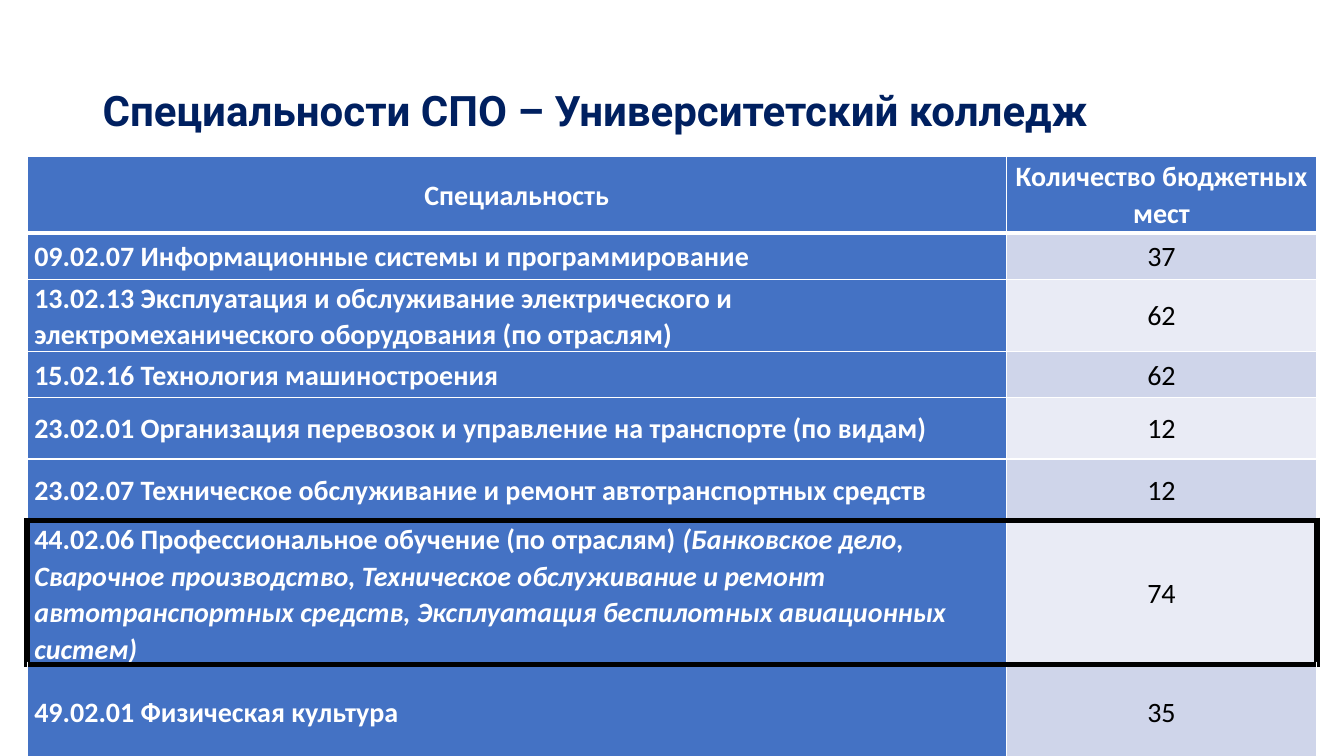
from pptx import Presentation
from pptx.util import Inches, Pt
from pptx.dml.color import RGBColor as RGB
from pptx.enum.text import PP_ALIGN as Align, MSO_ANCHOR as Anchor
from lxml.etree import fromstring

TITLE = "Специальности СПО – Университетский колледж"
HEAD = ("Специальность", "Количество бюджетных мест")
ROWS = [
    ("09.02.07 Информационные системы и программирование", "", "37", 0.46),
    ("13.02.13 Эксплуатация и обслуживание электрического и "
     "электромеханического оборудования (по отраслям)", "", "62", 0.66),
    ("15.02.16 Технология машиностроения", "", "62", 0.46),
    ("23.02.01 Организация перевозок и управление на транспорте (по видам)",
     "", "12", 0.61),
    ("23.02.07 Техническое обслуживание и ремонт автотранспортных средств",
     "", "12", 0.61),
    ("44.02.06 Профессиональное обучение (по отраслям) ",
     "(Банковское дело, Сварочное производство, Техническое обслуживание "
     "и ремонт автотранспортных средств, Эксплуатация беспилотных "
     "авиационных систем)", "74", 0.9),
    ("49.02.01 Физическая культура", "", "35", 0.94),
]
FRAMED = 6
COLS = (9.71, 3.08)
HEAD_H = 0.76
THEME = {
    "title": "002060", "head": "4472C4", "bands": ("E9EBF5", "CFD5EA"),
    "white": "FFFFFF", "black": "000000",
    "title_font": "Roboto", "font": "Calibri", "title_size": 30, "size": 20,
    "thin": 1, "rule": 3, "frame": 4.5,
}
NS = "http://schemas.openxmlformats.org/drawingml/2006/main"


def add_run(para, text, color, size, font, bold=False, slant=False):
    run = para.add_run()
    run.text = text
    face = run.font
    face.name, face.size = font, Pt(size)
    face.bold, face.italic = bold, slant
    face.color.rgb = RGB.from_string(color)


def edge(row, col, side):
    thin = (THEME["white"], THEME["thin"])
    frame = (THEME["black"], THEME["frame"])
    if side == "T":
        return edge(row - 1, col, "B") if row else thin
    if side == "B":
        if row == 0:
            return THEME["white"], THEME["rule"]
        return frame if row in (FRAMED - 1, FRAMED) else thin
    outer = (col, side) in ((0, "L"), (1, "R"))
    return frame if row == FRAMED and outer else thin


def set_edges(cell, row, col):
    props = cell._tc.get_or_add_tcPr()
    for at, side in enumerate("LRTB"):
        color, width = edge(row, col, side)
        props.insert(at, fromstring(
            f'<a:ln{side} xmlns:a="{NS}" w="{Pt(width)}"><a:solidFill>'
            f'<a:srgbClr val="{color}"/></a:solidFill></a:ln{side}>'))


def fill_cell(table, row, col, parts):
    cell = table.cell(row, col)
    dark = row == 0 or col == 0
    cell.fill.solid()
    cell.fill.fore_color.rgb = RGB.from_string(
        THEME["head"] if dark else THEME["bands"][row % 2])
    cell.vertical_anchor = Anchor.MIDDLE
    cell.margin_left = cell.margin_right = Inches(0.07)
    cell.margin_top = cell.margin_bottom = 0
    para = cell.text_frame.paragraphs[0]
    para.line_spacing = 1.07
    para.alignment = Align.LEFT if row and col == 0 else Align.CENTER
    for nth, text in enumerate(parts):
        if text:
            add_run(para, text, THEME["white" if dark else "black"],
                    THEME["size"], THEME["font"], dark, nth > 0)
    set_edges(cell, row, col)


def add_title(slide):
    box = slide.shapes.add_textbox(
        Inches(0.92), Inches(0.4), Inches(11.5), Inches(1.45))
    frame = box.text_frame
    frame.word_wrap = True
    frame.vertical_anchor = Anchor.MIDDLE
    para = frame.paragraphs[0]
    para.line_spacing = 0.9
    add_run(para, TITLE, THEME["title"], THEME["title_size"],
            THEME["title_font"], True)


def add_places(slide):
    sizes = [HEAD_H] + [row[3] for row in ROWS]
    table = slide.shapes.add_table(
        len(sizes), len(COLS), Inches(0.27), Inches(1.55),
        Inches(sum(COLS)), Inches(sum(sizes))).table
    for col, width in enumerate(COLS):
        table.columns[col].width = Inches(width)
        fill_cell(table, 0, col, [HEAD[col]])
    for row, size in enumerate(sizes):
        table.rows[row].height = Inches(size)
    for row, (name, extra, count, _) in enumerate(ROWS, 1):
        fill_cell(table, row, 0, [name, extra])
        fill_cell(table, row, 1, [count])


def main():
    deck = Presentation()
    deck.slide_width, deck.slide_height = Inches(13.33), Inches(7.5)
    slide = deck.slides.add_slide(deck.slide_layouts[6])
    add_title(slide)
    add_places(slide)
    deck.save("out.pptx")


if __name__ == "__main__":
    main()
